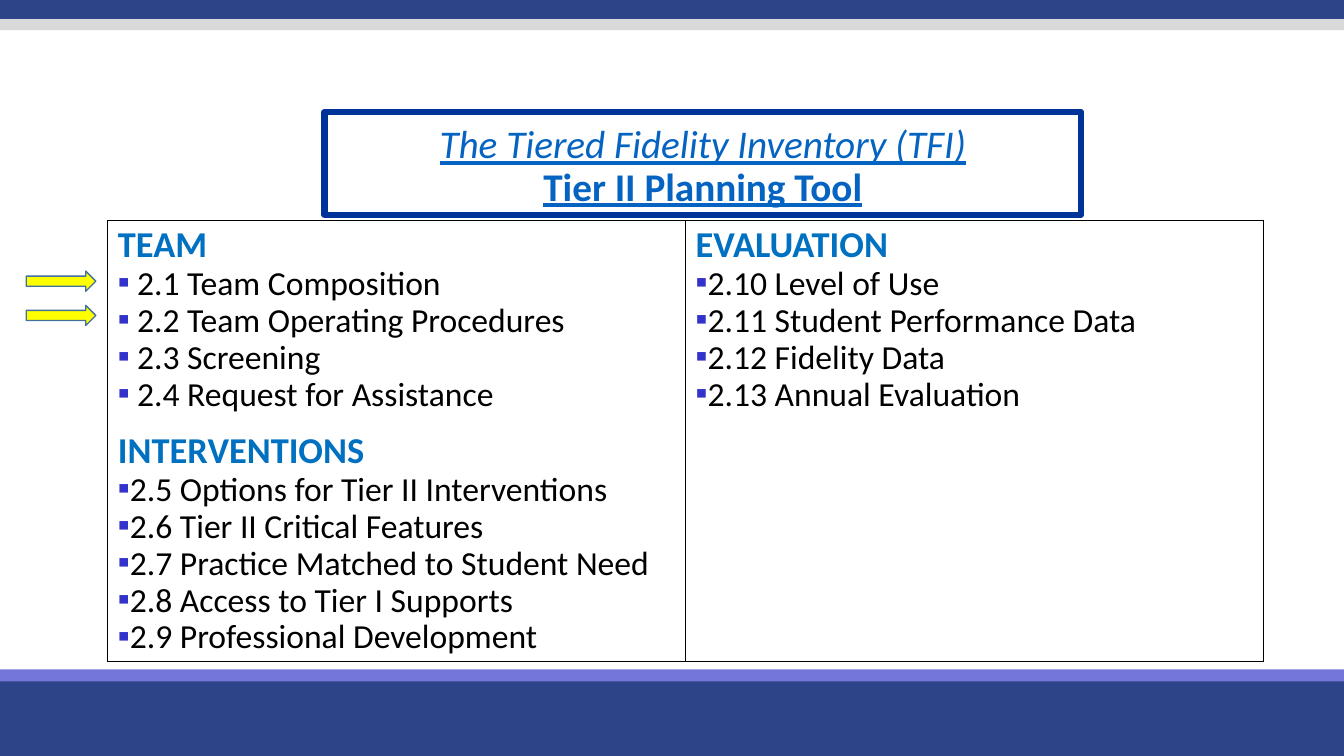
import pptx
import pptx.dml.color
import pptx.enum.shapes
import pptx.enum.text
import pptx.oxml
import pptx.oxml.ns
import pptx.util
from pptx.util import Inches, Pt

NAMESPACE = pptx.oxml.ns.nsdecls("a")
SHAPES = pptx.enum.shapes.MSO_SHAPE


def color(hex_text):
    return pptx.dml.color.RGBColor.from_string(hex_text)


def add_filled(kind, left, top, width, height, fill, line=None, line_width=1):
    shape = page.shapes.add_shape(kind, Inches(left), Inches(top), Inches(width), Inches(height))
    shape.shadow.inherit = False
    shape.fill.solid()
    shape.fill.fore_color.rgb = color(fill)
    if line:
        shape.line.color.rgb = color(line)
        shape.line.width = Pt(line_width)
    else:
        shape.line.fill.background()
    return shape


deck = pptx.Presentation()
deck.slide_width = Inches(13.33)
deck.slide_height = Inches(7.5)
page = deck.slides.add_slide(deck.slide_layouts[6])

bands = [(6.7, 0.8, "2E4488"), (6.64, 0.12, "7476DA"), (-0.03, 0.22, "2E4488"), (0.19, 0.11, "D9D9D9")]
for top, height, fill in bands:
    add_filled(SHAPES.RECTANGLE, 0, top, 13.33, height, fill)

columns = [
    [
        ("TEAM", 0.19, -0.19, [
            "2.1 Team Composition",
            "2.2 Team Operating Procedures",
            "2.3 Screening",
            "2.4 Request for Assistance",
        ]),
        ("INTERVENTIONS", 0, -0.17, [
            "2.5 Options for Tier II Interventions",
            "2.6 Tier II Critical Features",
            "2.7 Practice Matched to Student Need",
            "2.8 Access to Tier I Supports",
            "2.9 Professional Development",
        ]),
    ],
    [
        ("EVALUATION", 0, -0.17, [
            "2.10 Level of Use",
            "2.11 Student Performance Data",
            "2.12 Fidelity Data",
            "2.13 Annual Evaluation",
        ]),
    ],
]

frame = page.shapes.add_table(1, 2, Inches(1.07), Inches(2.19), Inches(11.46), Inches(4.13))
table = frame.table
table.first_row = False
table.horz_banding = False
for cell, sections in zip(table.rows[0].cells, columns):
    properties = cell._tc.get_or_add_tcPr()
    for side in ("lnL", "lnR", "lnT", "lnB"):
        properties.append(pptx.oxml.parse_xml(
            f'<a:{side} {NAMESPACE} w="12700"><a:solidFill><a:srgbClr val="000000"/></a:solidFill></a:{side}>'))
    cell.fill.background()
    para = cell.text_frame.paragraphs[0]
    for section_index, (heading, margin, indent, items) in enumerate(sections):
        for item_index, text in enumerate([heading] + items):
            is_heading = item_index == 0
            if section_index or item_index:
                para = cell.text_frame.add_paragraph()
            para.text = text
            para.line_spacing = 0.9
            if is_heading and section_index:
                para.space_before = Pt(13)
            if not is_heading:
                layout = para._p.get_or_add_pPr()
                layout.set("marL", str(Inches(margin)))
                layout.set("indent", str(Inches(indent)))
                for bullet in (
                    f'<a:buClr {NAMESPACE}><a:srgbClr val="3333CC"/></a:buClr>',
                    f'<a:buFont {NAMESPACE} typeface="Calibri"/>',
                    f'<a:buChar {NAMESPACE} char="▪"/>',
                ):
                    layout.append(pptx.oxml.parse_xml(bullet))
            font = para.runs[0].font
            font.name = "Calibri"
            font.size = Pt(26 if is_heading else 24)
            font.bold = is_heading
            font.color.rgb = color("0070C0" if is_heading else "000000")

for top in (3.03, 2.69):
    add_filled(SHAPES.RIGHT_ARROW, 0.26, top, 0.69, 0.2, "FFFF00", "42719B")

title = add_filled(SHAPES.RECTANGLE, 3.22, 1.11, 7.5, 1.02, "FFFFFF", "003399", 4.5)
outline = title._element.spPr.find(pptx.oxml.ns.qn("a:ln"))
outline.append(pptx.oxml.parse_xml(f"<a:round {NAMESPACE}/>"))
title.text_frame.word_wrap = True
title.text_frame.vertical_anchor = pptx.enum.text.MSO_ANCHOR.BOTTOM
para = title.text_frame.paragraphs[0]
para.text = "The Tiered Fidelity Inventory (TFI)\vTier II Planning Tool"
para.alignment = pptx.enum.text.PP_ALIGN.CENTER
para.line_spacing = 0.9
for span in para.runs:
    span.font.name = "Calibri"
    span.font.size = Pt(28)
    span.font.underline = True
    span.font.color.rgb = color("0563C1")
para.runs[0].font.italic = True
para.runs[1].font.bold = True

deck.save("out.pptx")
